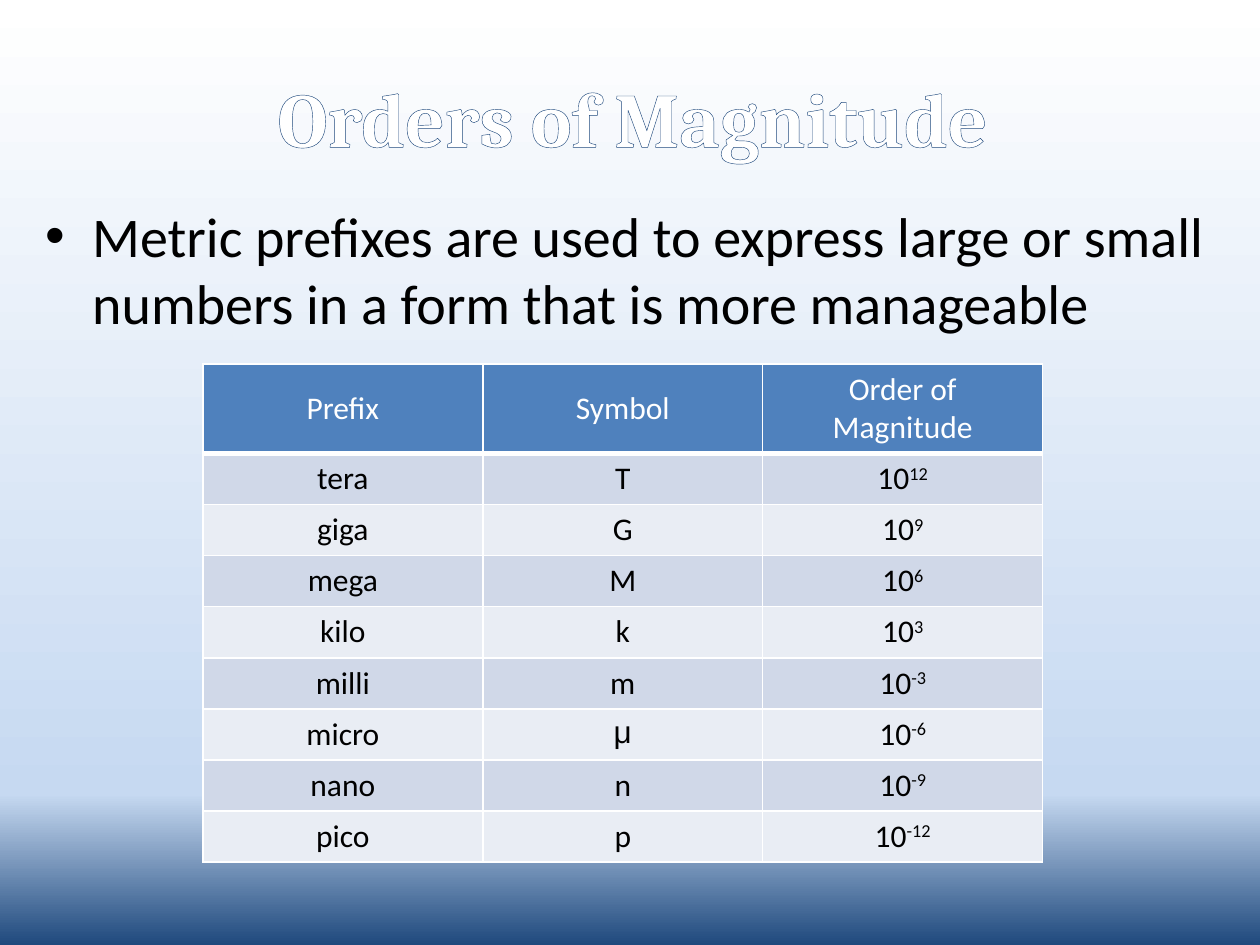
"""Builds a slide on metric prefixes and their orders of magnitude."""
import copy

import pptx
import pptx.dml.color
import pptx.enum.text
import pptx.oxml
import pptx.util

Cm = pptx.util.Cm
Pt = pptx.util.Pt
Align = pptx.enum.text.PP_ALIGN
Anchor = pptx.enum.text.MSO_ANCHOR
NAMESPACE = 'xmlns:a="http://schemas.openxmlformats.org/drawingml/2006/main"'

WHITE, BLACK, NAVY = "FFFFFF", "000000", "1F497D"
HEADER_FILL, BANDS = "4F81BD", ("D0D8E8", "E9EDF4")
SKY = ((0, NAVY), (0.16, "C6D9F1"), (1, WHITE))

HEADINGS = ("Prefix", "Symbol", "Order of Magnitude")
PREFIXES = (
    ("tera", "T", "12"),
    ("giga", "G", "9"),
    ("mega", "M", "6"),
    ("kilo", "k", "3"),
    ("milli", "m", "-3"),
    ("micro", "μ", "-6"),
    ("nano", "n", "-9"),
    ("pico", "p", "-12"),
)


def colour(hex_code):
    return pptx.dml.color.RGBColor.from_string(hex_code)


def line_xml(tag, points, hex_code):
    return pptx.oxml.parse_xml(
        f'<a:{tag} {NAVESPACE_FIX} w="{Pt(points)}"><a:solidFill>'
        f'<a:srgbClr val="{hex_code}"/></a:solidFill></a:{tag}>'
    )


NAVESPACE_FIX = NAMESPACE


class SlideBuilder:
    title_style = {"name": "Cambria", "size": Pt(44), "bold": True}
    body_style = {"name": "Calibri", "size": Pt(32), "bold": False}
    cell_style = {"name": "Calibri", "size": Pt(18), "bold": False}

    def __init__(self, slide):
        self.slide = slide

    def background(self, stops, angle):
        fill = self.slide.background.fill
        fill.gradient()
        fill.gradient_angle = angle
        stop_list = self.slide.element.xpath(".//a:gsLst")[0]
        while len(stop_list) < len(stops):
            stop_list.append(copy.deepcopy(stop_list[0]))
        for stop, (position, hex_code) in zip(fill.gradient_stops, stops):
            stop.position = position
            stop.color.rgb = colour(hex_code)

    def run(self, paragraph, words, style, hex_code):
        run = paragraph.add_run()
        run.text = words
        for attribute, value in style.items():
            setattr(run.font, attribute, value)
        run.font.color.rgb = colour(hex_code)
        return run._r.get_or_add_rPr()

    def text(self, left, top, width, height, anchor):
        frame = self.slide.shapes.add_textbox(
            Cm(left), Cm(top), Cm(width), Cm(height)).text_frame
        frame.word_wrap = True
        frame.vertical_anchor = anchor
        return frame.paragraphs[0]

    def title(self, words, *box):
        heading = self.text(*box, Anchor.MIDDLE)
        heading.alignment = Align.CENTER
        properties = self.run(heading, words, self.title_style, WHITE)
        properties.insert(0, line_xml("ln", 2.48, NAVY))

    def bullet(self, words, *box):
        statement = self.text(*box, Anchor.TOP)
        self.run(statement, words, self.body_style, BLACK)
        properties = statement._p.get_or_add_pPr()
        for name, value in {"marL": Cm(0.95), "indent": -Cm(0.95)}.items():
            properties.set(name, str(value))
        for mark in ('buFont typeface="Arial"', 'buChar char="•"'):
            properties.append(pptx.oxml.parse_xml(f"<a:{mark} {NAMESPACE}/>"))

    def cell(self, cell, words, hex_code, fill, bottom=1, power="", font="Calibri"):
        paragraph = cell.text_frame.paragraphs[0]
        paragraph.alignment = Align.CENTER
        self.run(paragraph, words, {**self.cell_style, "name": font}, hex_code)
        if power:
            exponent = self.run(paragraph, power, self.cell_style, hex_code)
            exponent.set("baseline", "30000")
        borders = {"lnL": 1, "lnR": 1, "lnT": 1, "lnB": bottom}
        for side, points in borders.items():
            cell._tc.get_or_add_tcPr().append(line_xml(side, points, WHITE))
        cell.fill.solid()
        cell.fill.fore_color.rgb = colour(fill)

    def prefix_table(self, left, top, width, header_height, row_height):
        height = header_height + row_height * len(PREFIXES)
        table = self.slide.shapes.add_table(
            len(PREFIXES) + 1, len(HEADINGS),
            Cm(left), Cm(top), Cm(width), Cm(height)).table
        table.first_row = table.horz_banding = False
        for row in table.rows:
            row.height = Cm(row_height)
        table.rows[0].height = Cm(header_height)
        for column, heading in enumerate(HEADINGS):
            header = table.cell(0, column)
            header.vertical_anchor = Anchor.MIDDLE
            self.cell(header, heading, WHITE, HEADER_FILL, bottom=3)
        for index, (prefix, symbol, power) in enumerate(PREFIXES):
            name, sign, order = table.rows[index + 1].cells
            band = BANDS[index % 2]
            self.cell(name, prefix, BLACK, band)
            self.cell(sign, symbol, BLACK, band,
                      font="Arial" if symbol == "μ" else "Calibri")
            self.cell(order, "10", BLACK, band, power=power)


def main():
    deck = pptx.Presentation()
    deck.slide_width, deck.slide_height = Cm(25.4), Cm(19.05)
    builder = SlideBuilder(deck.slides.add_slide(deck.slide_layouts[6]))
    builder.background(SKY, 90)
    builder.title("Orders of Magnitude", 0.66, 0.76, 24.2, 3.18)
    builder.bullet(
        "Metric prefixes are used to express large or small numbers "
        "in a form that is more manageable", 0.66, 3.94, 24.2, 14.5)
    builder.prefix_table(4.09, 7.34, 16.93, 1.8, 1.03)
    deck.save("out.pptx")


if __name__ == "__main__":
    main()
